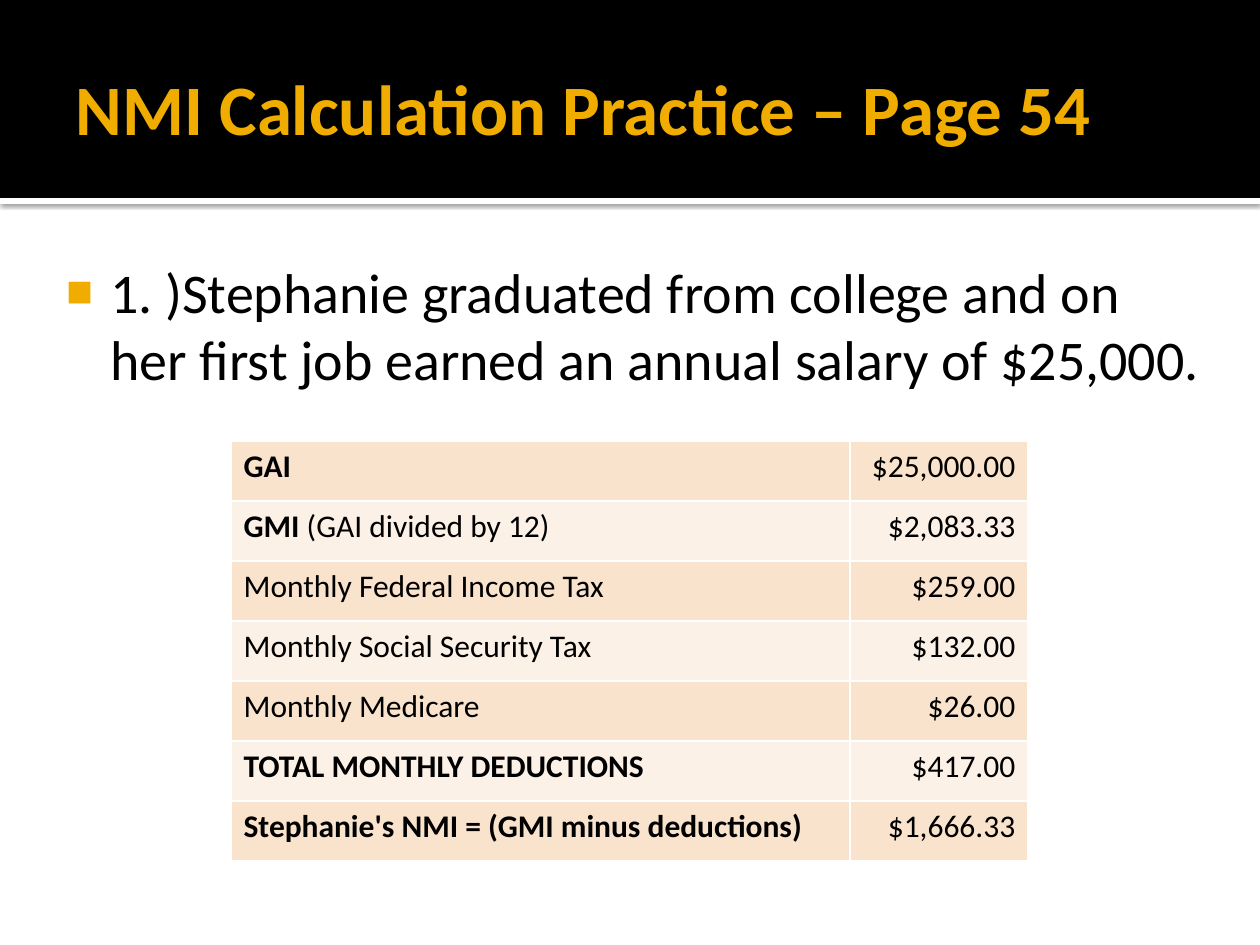
from lxml import etree
from pptx import Presentation, util as u
from pptx.dml.color import RGBColor
from pptx.enum import shapes, text
from pptx.oxml import parse_xml
from pptx.oxml.ns import nsdecls, qn

# Content
TITLE = "NMI Calculation Practice – Page 54"
QUESTION = ("1. )Stephanie graduated from college and on her first job "
            "earned an annual salary of $25,000.")
# bold label, plain label, amount
ROWS = [
    ("GAI", "", "$25,000.00"),
    ("GMI", " (GAI divided by 12)", "$2,083.33"),
    ("", "Monthly Federal Income Tax", "$259.00"),
    ("", "Monthly Social Security Tax", "$132.00"),
    ("", "Monthly Medicare", "$26.00"),
    ("TOTAL MONTHLY DEDUCTIONS", "", "$417.00"),
    ("Stephanie's NMI = (GMI minus deductions)", "", "$1,666.33"),
]

# Style and layout, lengths in px
COLOURS = {"gold": "F0AD00", "black": "000000", "white": "FFFFFF",
           "dark row": "F9E3CC", "light row": "FCF1E7"}
FONT = "Calibri"
WIDTH, HEIGHT = 1260, 945
BANDS = [("white", (0, 198, WIDTH, 6)), ("black", (0, 0, WIDTH, 198))]
TITLE_AREA = (63, 21, 1134, 173)
BODY_AREA = (42, 244, 1176, 638)
TABLE_LEFT, TABLE_TOP, ROW_HEIGHT = 231, 441, 60
COLUMNS = (619, 178)


def px(length):
    return u.Emu(round(length * 914400 / 126))


def colour(name):
    return RGBColor.from_string(COLOURS[name])


def style(span, size, name="black", bold=False):
    span.font.name, span.font.size, span.font.bold = FONT, u.Pt(size), bold
    span.font.color.rgb = colour(name)


def place(box, area):
    box.left, box.top, box.width, box.height = map(px, area)


def set_margins(frame, left, top, right, bottom):
    frame.margin_left, frame.margin_top = px(left), px(top)
    frame.margin_right, frame.margin_bottom = px(right), px(bottom)


def add_borders(cell):
    properties = cell._tc.get_or_add_tcPr()
    for index, side in enumerate(("lnL", "lnR", "lnT", "lnB")):
        properties.insert(index, parse_xml(
            f'<a:{side} {nsdecls("a")} w="12700"><a:solidFill>'
            f'<a:srgbClr val="{COLOURS["white"]}"/></a:solidFill></a:{side}>'))


deck = Presentation()
deck.slide_width, deck.slide_height = px(WIDTH), px(HEIGHT)
page = deck.slides.add_slide(deck.slide_layouts.get_by_name("Title and Content"))
title, body = page.placeholders

# Header bands, sent behind the placeholders
for order, (name, area) in enumerate(BANDS):
    band = page.shapes.add_shape(shapes.MSO_SHAPE.RECTANGLE, *map(px, area))
    band.fill.solid()
    band.fill.fore_color.rgb = colour(name)
    band.line.fill.background()
    band.shadow.inherit = False
    if name == "white":
        effects = band._element.spPr.find(qn("a:effectLst"))
        effects.append(parse_xml(
            f'<a:outerShdw {nsdecls("a")} blurRad="31750" dist="10160" dir="5400000">'
            f'<a:srgbClr val="{COLOURS["black"]}"><a:alpha val="60000"/>'
            '</a:srgbClr></a:outerShdw>'))
    title._element.addprevious(band._element)

# Title
place(title, TITLE_AREA)
frame = title.text_frame
frame.text = TITLE
frame.vertical_anchor = text.MSO_ANCHOR.MIDDLE
frame.auto_size = text.MSO_AUTO_SIZE.NONE
set_margins(frame, 13, 6, 6, 6)
frame.paragraphs[0].alignment = text.PP_ALIGN.LEFT
style(frame.paragraphs[0].runs[0], 40.5, "gold", True)

# Question with a square bullet
place(body, BODY_AREA)
frame = body.text_frame
frame.text = QUESTION
frame.auto_size = text.MSO_AUTO_SIZE.NONE
set_margins(frame, 8, 13, 13, 6)
para = frame.paragraphs[0]
para.space_before = u.Pt(0)
style(para.runs[0], 32)
properties = para._p.get_or_add_pPr()
properties.set("marL", str(px(60)))
properties.set("indent", str(px(-44)))
bullet_colour = etree.SubElement(properties, qn("a:buClr"))
etree.SubElement(bullet_colour, qn("a:srgbClr"), val=COLOURS["gold"])
etree.SubElement(properties, qn("a:buSzPct"), val="80000")
etree.SubElement(properties, qn("a:buChar"), char="■")

# Income table
table = page.shapes.add_table(
    len(ROWS), len(COLUMNS), px(TABLE_LEFT), px(TABLE_TOP),
    px(sum(COLUMNS)), px(ROW_HEIGHT * len(ROWS))).table
table.first_row = table.horz_banding = False
for column, width in zip(table.columns, COLUMNS):
    column.width = px(width)
for index, (strong, plain, amount) in enumerate(ROWS):
    table.rows[index].height = px(ROW_HEIGHT)
    label_cell, amount_cell = table.rows[index].cells
    para = label_cell.text_frame.paragraphs[0]
    for words, bold in ((strong, True), (plain, False)):
        if words:
            span = para.add_run()
            span.text = words
            style(span, 18, bold=bold)
    amount_cell.text_frame.text = amount
    para = amount_cell.text_frame.paragraphs[0]
    para.alignment = text.PP_ALIGN.RIGHT
    style(para.runs[0], 18)
    for cell in (label_cell, amount_cell):
        cell.fill.solid()
        cell.fill.fore_color.rgb = colour("light row" if index % 2 else "dark row")
        add_borders(cell)

deck.save("out.pptx")
